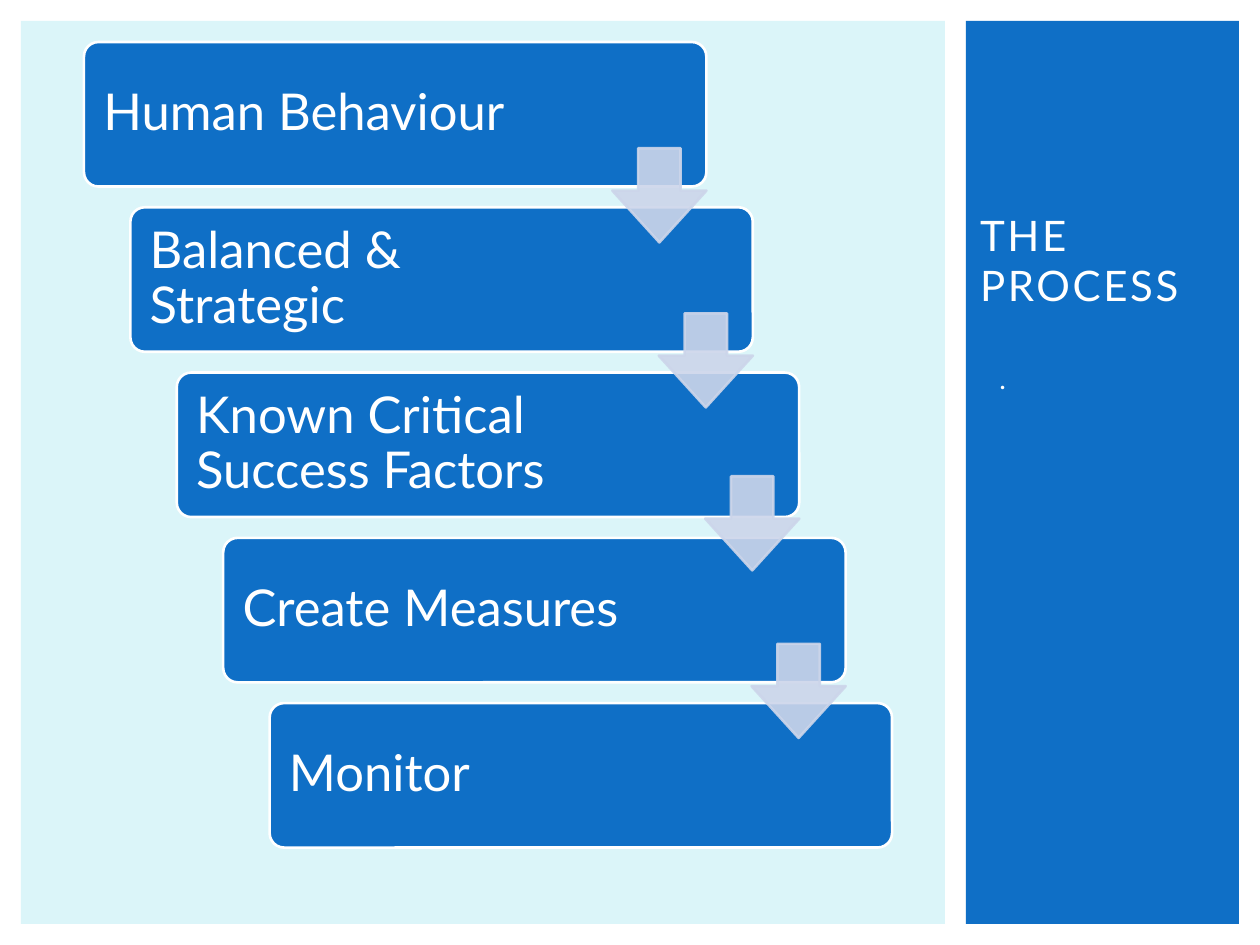
"""Build a slide with a five-step descending process beside a title panel."""
from dataclasses import dataclass

from lxml import etree
from pptx import Presentation
from pptx import util as u
from pptx.dml.color import RGBColor
from pptx.enum import shapes, text
from pptx.oxml.ns import qn


@dataclass(frozen=True)
class Theme:
    white: str = "FFFFFF"
    blue: str = "0F6FC6"
    pale: str = "DBF5F9"
    arrow: str = "CCD5EA"
    font: str = "Lato"
    step_size: float = 29
    title_size: float = 24
    body_size: float = 16
    line: float = 1.5
    tracking: float = 1.5
    arrow_alpha: int = 90


T = Theme()
COLS, ROWS = 60, 45
WIDTH, HEIGHT = u.Inches(10), u.Inches(7.5)
STEP_X, STEP_Y = 2.21, 7.87
STEPS = [
    ("Human Behaviour", 21.36, 7.06),
    ("Balanced & Strategic", 22.56, 14.92),
    ("Known Critical Success Factors", 22.56, 22.68),
    ("Create Measures", 22.56, 30.66),
    ("Monitor", 22.56, None),
]


def place(col, row, cols, rows):
    return (round(WIDTH * col / COLS), round(HEIGHT * row / ROWS),
            round(WIDTH * cols / COLS), round(HEIGHT * rows / ROWS))


def add_block(s, kind, box, fill, line=None, adjust=(), alpha=None):
    sp = s.shapes.add_shape(kind, *place(*box))
    sp.shadow.inherit = False
    sp.fill.solid()
    sp.fill.fore_color.rgb = RGBColor.from_string(fill)
    if line:
        sp.line.color.rgb = RGBColor.from_string(line)
        sp.line.width = u.Pt(T.line)
    else:
        sp.line.fill.background()
    for i, value in enumerate(adjust):
        sp.adjustments[i] = value
    if alpha:
        for clr in sp._element.spPr.iter(qn("a:srgbClr")):
            etree.SubElement(clr, qn("a:alpha")).set("val", str(alpha * 1000))
    return sp


def add_text(s, box, words, size, anchor, insets=(0.1, 0.05, 0.1, 0.05), tracking=0):
    sp = s.shapes.add_textbox(*place(*box))
    tf = sp.text_frame
    tf.word_wrap = True
    tf.vertical_anchor = anchor
    tf.margin_left, tf.margin_top, tf.margin_right, tf.margin_bottom = map(u.Inches, insets)
    p = tf.paragraphs[0]
    r = p.add_run()
    r.text = words
    r.font.name = T.font
    r.font.size = u.Pt(size)
    r.font.color.rgb = RGBColor.from_string(T.white)
    if tracking:
        r._r.get_or_add_rPr().set("spc", str(round(tracking * 100)))
    return p


def add_panels(s):
    rect = shapes.MSO_SHAPE.RECTANGLE
    add_block(s, rect, (0, 0, COLS, ROWS), T.white)
    add_block(s, rect, (46, 1, 13, 43), T.blue)
    add_block(s, rect, (1, 1, 44, 43), T.pale)


def add_step(s, index, label, text_cols):
    col, row = 4 + index * STEP_X, 2 + index * STEP_Y
    add_block(s, shapes.MSO_SHAPE.ROUNDED_RECTANGLE, (col, row, 29.64, 6.88),
              T.blue, T.white, (0.1,))
    p = add_text(s, (col + 0.2, row + 0.2, text_cols, 6.48), label, T.step_size,
                 text.MSO_ANCHOR.MIDDLE, (0.12,) * 4)
    p.line_spacing = 0.9
    p.space_after = u.Pt(10)


def add_arrow(s, index, row):
    add_block(s, shapes.MSO_SHAPE.DOWN_ARROW, (29.16 + index * STEP_X, row, 4.48, 4.48),
              T.arrow, T.arrow, (0.45, 0.55), T.arrow_alpha)


def main():
    prs = Presentation()
    prs.slide_width, prs.slide_height = WIDTH, HEIGHT
    s = prs.slides.add_slide(prs.slide_layouts[6])
    s.background.fill.solid()
    s.background.fill.fore_color.rgb = RGBColor.from_string(T.pale)
    add_panels(s)
    for i, (label, text_cols, _) in enumerate(STEPS):
        add_step(s, i, label, text_cols)
    for i, (_, _, arrow_row) in enumerate(STEPS[:-1]):
        add_arrow(s, i, arrow_row)
    p = add_text(s, (47, 17.22, 11, 18.48), ".", T.body_size, text.MSO_ANCHOR.TOP,
                 (0.1, 0, 0.1, 0.05), T.tracking)
    p.space_before = u.Pt(3)
    add_text(s, (46.08, 4.08, 13.92, 10.98), "THE PROCESS", T.title_size,
             text.MSO_ANCHOR.BOTTOM, tracking=T.tracking)
    prs.save("out.pptx")


if __name__ == "__main__":
    main()
